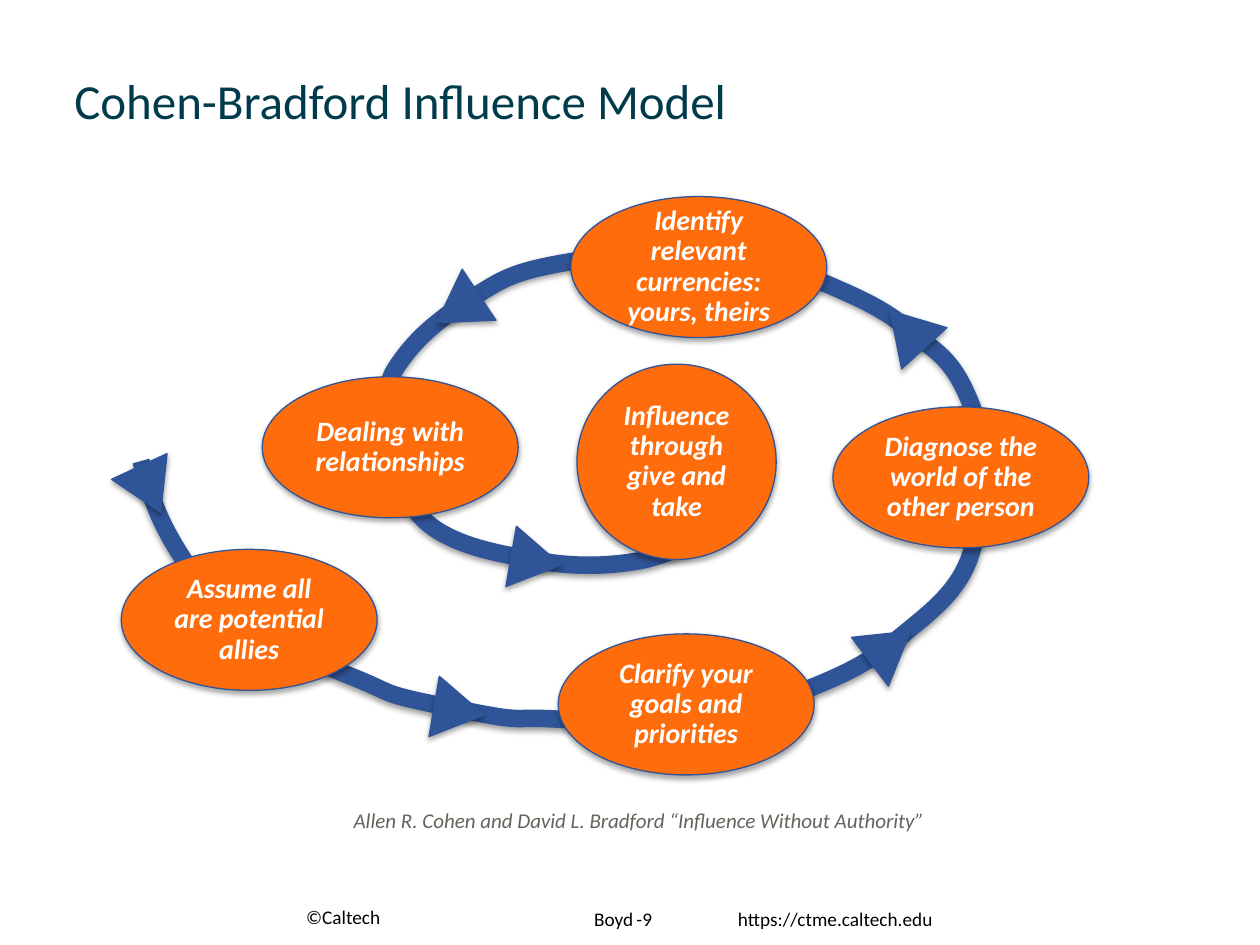
from lxml import etree
from pptx import Presentation, util as u
from pptx.dml.color import RGBColor
from pptx.enum import shapes, text
from pptx.oxml.ns import qn

Pt = u.Pt
BLUE, ORANGE, WHITE, BLACK = "2F5497", "FF6C0C", "FFFFFF", "000000"
TEAL, GRAY = "003B4C", "64645D"

SPIRAL_START = (12.6, 151.5)
SPIRAL_CURVES = [
    ((18.4, 172.4), (22.7, 186.8), (39.3, 211.3)),
    ((55.8, 235.8), (97.6, 260.2), (129.3, 273.2)),
    ((161, 285.4), (144.4, 283.3), (190.5, 292.6)),
    ((236.6, 302), (220, 297), (253.1, 299.1)),
    ((287, 300.6), (357.5, 294.8), (391.4, 282.6)),
    ((424.5, 269.6), (433.8, 262.4), (450.4, 248.7)),
    ((466.2, 235.8), (482.1, 223.5), (487.8, 201.2)),
    ((494.3, 179.6), (497.2, 142.9), (486.4, 117.7)),
    ((476.3, 93.2), (468.4, 90.3), (454.7, 78.8)),
    ((440.3, 68), (436, 63.7), (403.6, 50)),
    ((371.2, 37), (290.6, 32), (256.7, 37.8)),
    ((222.9, 43.5), (217.8, 48.6), (201.3, 58.6)),
    ((184.7, 69.4), (169.6, 80.2), (157.4, 99.7)),
    ((145.8, 119.8), (158.1, 167.4), (172.5, 183.2)),
    ((186.9, 199), (215, 204.1), (235.8, 207.7)),
    ((256.7, 212), (277.6, 212), (297.8, 208.4)),
    ((317.2, 204.8), (353.2, 186.1), (353.2, 186.1)),
]
ARROW_SIZE = (35, 29)
ARROWS = [(450.4, 76.3, 317.7), (238.4, 208.4, 99.9), (193.7, 64.4, 236.5),
          (440.7, 257.4, 52.9), (194.4, 294.1, 99.7), (17.7, 167.7, 155.1)]
STEP_SIZE = (146.2, 80.6)
CENTER_SIZE = (113.8, 111.6)
STEPS = [
    ("Assume all are potential allies", 1.3, 201.9, STEP_SIZE, 7.2),
    ("Identify relevant currencies: yours, theirs", 258.2, 0.3, STEP_SIZE, 0),
    ("Diagnose the world of the other person", 408, 120.5, STEP_SIZE, 7.2),
    ("Clarify your goals and priorities", 251, 250.2, STEP_SIZE, 7.2),
    ("Dealing with relationships", 81.9, 103.3, STEP_SIZE, 7.2),
    ("Influence through give and take", 261.7, 96.1, CENTER_SIZE, 7.2),
]


def color(value):
    return RGBColor.from_string(value)


def write(shape, words, size=11, ink=BLACK, bold=False, italic=False,
          align=text.PP_ALIGN.LEFT, anchor=text.MSO_ANCHOR.TOP,
          spacing=None, side=7.2):
    frame = shape.text_frame
    frame.word_wrap = True
    frame.auto_size = text.MSO_AUTO_SIZE.NONE
    frame.vertical_anchor = anchor
    frame.margin_left = frame.margin_right = Pt(side)
    frame.margin_top = frame.margin_bottom = Pt(3.6)
    para = frame.paragraphs[0]
    para.alignment = align
    para.line_spacing = spacing
    para.space_before = Pt(0)
    span = para.add_run()
    span.text = words
    font = span.font
    font.name, font.size = "Calibri", Pt(size)
    font.bold, font.italic = bold, italic
    font.color.rgb = color(ink)


def add_label(page, words, left, top, width, height, **style):
    box = page.shapes.add_textbox(Pt(left), Pt(top), Pt(width), Pt(height))
    write(box, words, **style)


def style_shape(shape, fill=None, weight=0.75, distance=1.8, opacity=35):
    if fill:
        shape.fill.solid()
        shape.fill.fore_color.rgb = color(fill)
    else:
        shape.fill.background()
    shape.line.color.rgb = color(BLUE)
    shape.line.width = Pt(weight)
    shape.shadow.inherit = False
    effects = shape._element.spPr.find(qn("a:effectLst"))
    shadow = etree.SubElement(effects, qn("a:outerShdw"), blurRad=str(Pt(3.1)),
                              dist=str(Pt(distance)), dir="5400000", rotWithShape="0")
    tone = etree.SubElement(shadow, qn("a:srgbClr"), val=BLACK)
    etree.SubElement(tone, qn("a:alpha"), val=str(opacity * 1000))


def curve_points(start, curves, steps=12):
    for first, second, end in curves:
        for step in range(1, steps + 1):
            t = step / steps
            s = 1 - t
            yield tuple(s**3 * a + 3 * s * s * t * b + 3 * s * t * t * c + t**3 * d
                        for a, b, c, d in zip(start, first, second, end))
        start = end


def add_title(page, left, top, width, height):
    title = page.shapes.title
    title.left, title.top = Pt(left), Pt(top)
    title.width, title.height = Pt(width), Pt(height)
    write(title, "Cohen-Bradford Influence Model", size=28, ink=TEAL,
          anchor=text.MSO_ANCHOR.BOTTOM, spacing=0.9)


def add_spiral(page, left, top):
    def place(point):
        return Pt(left + point[0]), Pt(top + point[1])

    builder = page.shapes.build_freeform(*place(SPIRAL_START))
    extent = curve_points(SPIRAL_START, SPIRAL_CURVES)
    builder.add_line_segments([place(point) for point in extent], close=False)
    spiral = builder.convert_to_shape()
    outline = next(spiral._element.iter(qn("a:path")))
    for segment in outline.findall(qn("a:lnTo")):
        outline.remove(segment)
    for curve in SPIRAL_CURVES:
        segment = etree.SubElement(outline, qn("a:cubicBezTo"))
        for x, y in map(place, curve):
            etree.SubElement(segment, qn("a:pt"), x=str(x - spiral.left),
                             y=str(y - spiral.top))
    style_shape(spiral, weight=10, distance=1.6, opacity=38)


def add_arrows(page, left, top):
    width, height = ARROW_SIZE
    for x, y, angle in ARROWS:
        arrow = page.shapes.add_shape(
            shapes.MSO_SHAPE.ISOSCELES_TRIANGLE, Pt(left + x - width / 2),
            Pt(top + y - height / 2), Pt(width), Pt(height))
        arrow.rotation = angle
        style_shape(arrow, BLUE)


def add_steps(page, left, top):
    for words, x, y, (width, height), side in STEPS:
        oval = page.shapes.add_shape(shapes.MSO_SHAPE.OVAL, Pt(left + x), Pt(top + y),
                                     Pt(width), Pt(height))
        style_shape(oval, ORANGE)
        write(oval, words, size=16, ink=WHITE, bold=True, italic=True, spacing=0.9,
              align=text.PP_ALIGN.CENTER, anchor=text.MSO_ANCHOR.MIDDLE, side=side)


def add_diagram(page, left, top):
    add_spiral(page, left, top)
    add_arrows(page, left, top)
    add_steps(page, left, top)


def add_footer(page, left, top):
    middle = text.MSO_ANCHOR.MIDDLE
    add_label(page, "©Caltech", left, top, 84, 18, anchor=text.MSO_ANCHOR.BOTTOM)
    add_label(page, "https://ctme.caltech.edu", left + 246.8, top - 1.4, 145.4, 21)
    add_label(page, "Boyd", left + 105.4, top, 95.8, 18, anchor=middle,
              align=text.PP_ALIGN.RIGHT)
    add_label(page, "-9", left + 188.8, top, 48, 18, anchor=middle)


def main():
    deck = Presentation()
    deck.slide_width, deck.slide_height = Pt(720), Pt(540)
    page = deck.slides.add_slide(deck.slide_layouts[5])
    add_title(page, 35.3, 40.3, 648, 37.4)
    add_label(page, "Allen R. Cohen and David L. Bradford “Influence Without Authority”",
              195, 458, 346.5, 21.6, size=12, ink=GRAY, italic=True)
    add_diagram(page, 68, 112)
    add_footer(page, 167.8, 516.2)
    deck.save("out.pptx")


if __name__ == "__main__":
    main()
